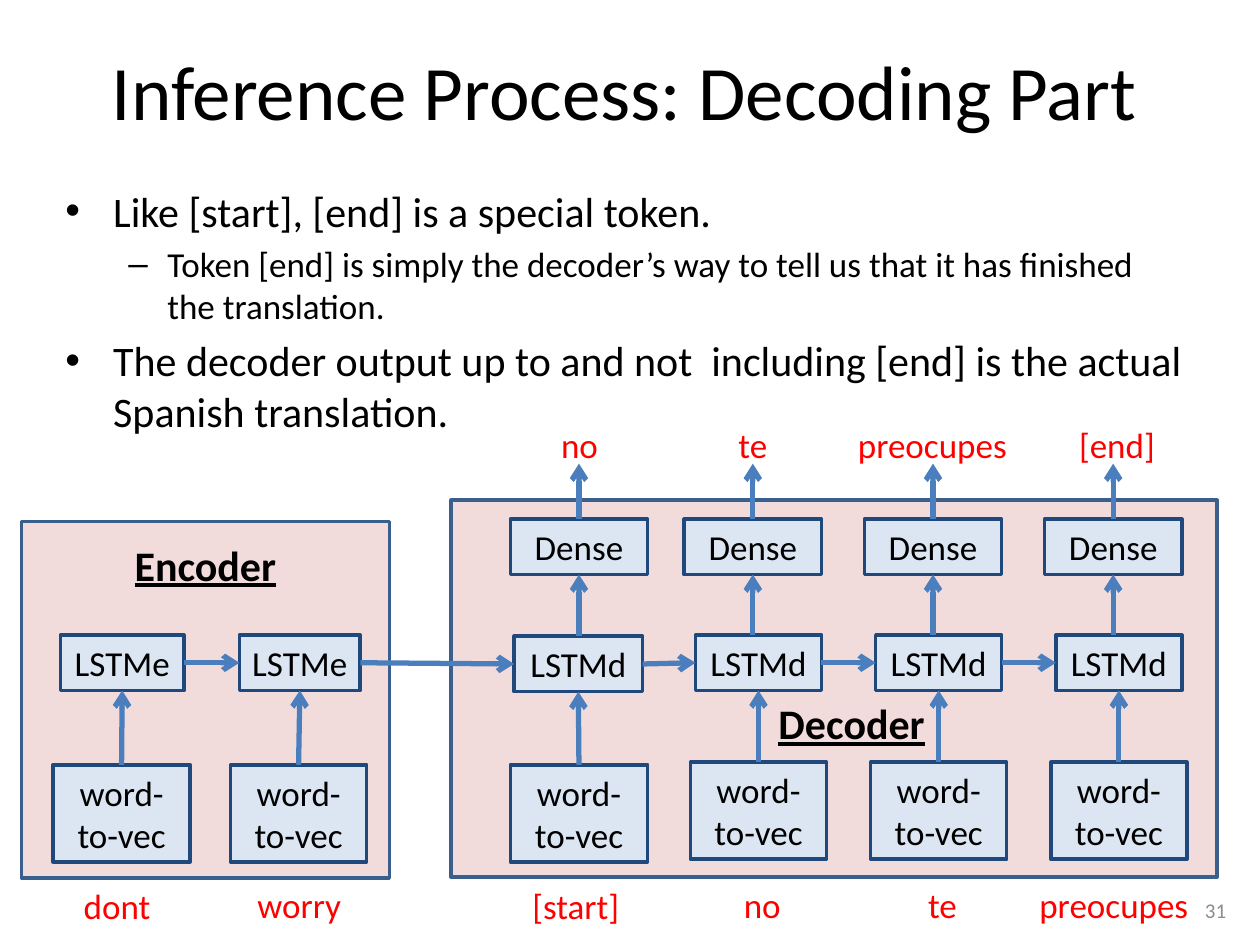
from dataclasses import dataclass
from typing import NamedTuple, Optional

from lxml import etree
from pptx import Presentation, util as u
from pptx.dml.color import RGBColor
from pptx.enum import shapes, text
from pptx.oxml.ns import qn

PX = u.Inches(1) // 100  # one px is a hundredth of an inch


@dataclass(frozen=True)
class Theme:
    font: str = "Calibri"
    ink: str = "000000"
    token: str = "FF0000"
    number: str = "8C8C8C"
    panel: str = "F2DCDB"
    panel_line: str = "3A5F8C"
    block: str = "DCE6F2"
    block_line: str = "1F497D"
    arrow: str = "4B7EBC"
    title_pt: int = 44
    head_pt: int = 24
    text_pt: int = 20
    small_pt: int = 12


T = Theme()


class Box(NamedTuple):
    x: int
    y: int
    w: int
    h: int

    def emu(self) -> list[int]:
        return [v * PX for v in self]


class Token(NamedTuple):
    text: str
    x: int
    y: int
    w: int


@dataclass(frozen=True)
class Step:
    """One time step: input token, embedding, LSTM, and maybe an output."""
    token: Token
    word: Box
    lstm: Box
    cell: str
    dense: Optional[Box] = None
    output: Optional[Token] = None


def rgb(value: str) -> RGBColor:
    return RGBColor.from_string(value)


def add_run(p, words: str, size: int, color: str = T.ink, strong: bool = False) -> None:
    r = p.add_run()
    r.text = words
    r.font.name, r.font.size = T.font, u.Pt(size)
    r.font.color.rgb = rgb(color)
    if strong:
        r.font.bold = r.font.underline = True


def add_label(s, box: Box, words: str, size: int, color: str = T.ink, strong: bool = False,
              align=text.PP_ALIGN.CENTER):
    sp = s.shapes.add_textbox(*box.emu())
    tf = sp.text_frame
    tf.word_wrap = False
    p = tf.paragraphs[0]
    p.alignment = align
    add_run(p, words, size, color, strong)
    return sp


def add_token(s, token: Token) -> None:
    add_label(s, Box(token.x, token.y, token.w, 44), token.text, T.text_pt, T.token)


def add_rect(s, box: Box, fill: str, line: str):
    sp = s.shapes.add_shape(shapes.MSO_SHAPE.RECTANGLE, *box.emu())
    sp.shadow.inherit = False
    sp.fill.solid()
    sp.fill.fore_color.rgb = rgb(fill)
    sp.line.color.rgb = rgb(line)
    sp.line.width = u.Pt(2)
    return sp


def add_block(s, box: Box, *lines: str):
    sp = add_rect(s, box, T.block, T.block_line)
    tf = sp.text_frame
    tf.word_wrap = True
    tf.vertical_anchor = text.MSO_ANCHOR.TOP
    p = tf.paragraphs[0]
    p.alignment = text.PP_ALIGN.CENTER
    for i, words in enumerate(lines):
        if i:
            p.add_line_break()
        add_run(p, words, T.text_pt)
    return sp


def add_arrow(s, x1: int, y1: int, x2: int, y2: int):
    """Arrow between two points given in EMU."""
    c = s.shapes.add_connector(shapes.MSO_CONNECTOR.STRAIGHT, x1, y1, x2, y2)
    c.line.color.rgb = rgb(T.arrow)
    c.line.width = u.Pt(3)
    etree.SubElement(c.line._get_or_add_ln(), qn("a:tailEnd"), type="arrow")
    etree.SubElement(c._element.spPr, qn("a:effectLst"))
    return c


def join(s, start, start_side: int, end, end_side: int) -> None:
    c = add_arrow(s, 0, 0, 0, 0)
    c.begin_connect(start, start_side)
    c.end_connect(end, end_side)


def add_step(s, step: Step, previous=None):
    """Draw a step, link it to the previous cell and return its own cell."""
    add_token(s, step.token)
    word = add_block(s, step.word, "word-", "to-vec")
    lstm = add_block(s, step.lstm, step.cell)
    join(s, word, 0, lstm, 2)
    if previous is not None:
        join(s, previous, 3, lstm, 1)
    if step.dense:
        dense = add_block(s, step.dense, "Dense")
        middle = dense.left + dense.width // 2
        up = add_arrow(s, middle, lstm.top, middle, dense.top + dense.height)
        up.end_connect(dense, 2)
        out = add_arrow(s, middle, dense.top, middle, 368 * PX)
        out.begin_connect(dense, 0)
        add_token(s, step.output)
    return lstm


def add_bullet(tf, words: str, level: int, first: bool) -> None:
    size, char, margin, indent = ((T.head_pt, "•", 38, -38), (T.text_pt, "–", 81, -31))[level]
    p = tf.paragraphs[0] if first else tf.add_paragraph()
    p.level = level
    p.space_before = u.Pt(size * 0.2)
    pPr = p._p.get_or_add_pPr()
    pPr.set("marL", str(margin * PX))
    pPr.set("indent", str(indent * PX))
    etree.SubElement(pPr, qn("a:buFont"), typeface="Arial")
    etree.SubElement(pPr, qn("a:buChar"), char=char)
    add_run(p, words, size)


BULLETS = [
    (0, "Like [start], [end] is a special token."),
    (1, "Token [end] is simply the decoder’s way to tell us that it has finished the translation."),
    (0, "The decoder output up to and not  including [end] is the actual Spanish translation."),
]
ENCODER = [
    Step(Token("dont", 56, 697, 74), Box(42, 607, 109, 77), Box(48, 504, 98, 44), "LSTMe"),
    Step(Token("worry", 194, 696, 87), Box(183, 607, 108, 77), Box(190, 504, 96, 44), "LSTMe"),
]
# The later decoder steps repeat at an even pitch
PITCH = 143
LATER = [
    (Token("no", 580, 696, 50), Token("te", 576, 331, 43)),
    (Token("te", 723, 696, 50), Token("preocupes", 670, 331, 140)),
    (Token("preocupes", 814, 696, 140), Token("[end]", 846, 331, 81)),
]
DECODER = [
    Step(Token("[start]", 412, 697, 90), Box(405, 607, 109, 77), Box(408, 505, 102, 44),
         "LSTMd", Box(405, 412, 109, 44), Token("no", 435, 331, 50)),
] + [
    Step(token, Box(548 + i * PITCH, 605, 108, 77), Box(552 + i * PITCH, 504, 100, 44),
         "LSTMd", Box(543 + i * PITCH, 412, 109, 44), output)
    for i, (token, output) in enumerate(LATER)
]


def main() -> None:
    prs = Presentation()
    prs.slide_width, prs.slide_height = 1000 * PX, 750 * PX
    s = prs.slides.add_slide(prs.slide_layouts[5])

    # Title
    sp = s.shapes.title
    sp.left, sp.top, sp.width, sp.height = Box(42, 17, 908, 108).emu()
    sp.text_frame.vertical_anchor = text.MSO_ANCHOR.MIDDLE
    p = sp.text_frame.paragraphs[0]
    p.alignment = text.PP_ALIGN.CENTER
    add_run(p, "Inference Process: Decoding Part", T.title_pt)

    # Bullets
    tf = s.shapes.add_textbox(*Box(42, 142, 908, 183).emu()).text_frame
    tf.word_wrap = True
    for i, (level, words) in enumerate(BULLETS):
        add_bullet(tf, words, level, first=i == 0)

    # Panels and their headings
    for panel, name, heading in (
        (Box(358, 397, 608, 299), "Decoder", Box(608, 549, 139, 50)),
        (Box(17, 414, 292, 283), "Encoder", Box(97, 423, 134, 50)),
    ):
        add_rect(s, panel, T.panel, T.panel_line)
        add_label(s, heading, name, T.head_pt, strong=True, align=text.PP_ALIGN.LEFT)

    # Chain of steps, encoder into decoder
    cell = None
    for step in ENCODER + DECODER:
        cell = add_step(s, step, cell)

    # Slide number
    sp = add_label(s, Box(925, 702, 58, 40), "31", T.small_pt, T.number,
                   align=text.PP_ALIGN.RIGHT)
    sp.text_frame.vertical_anchor = text.MSO_ANCHOR.MIDDLE

    prs.save("out.pptx")


if __name__ == "__main__":
    main()
